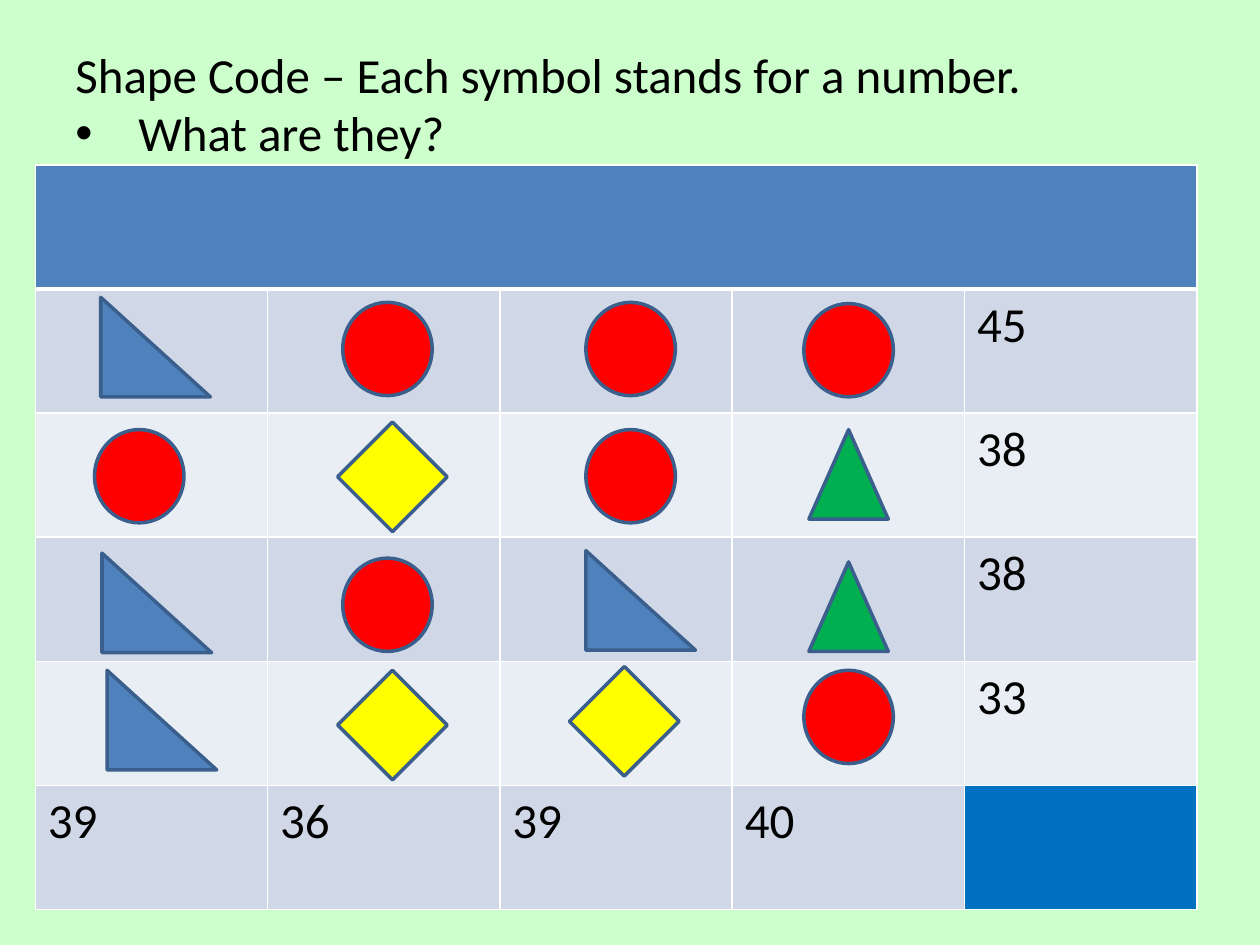
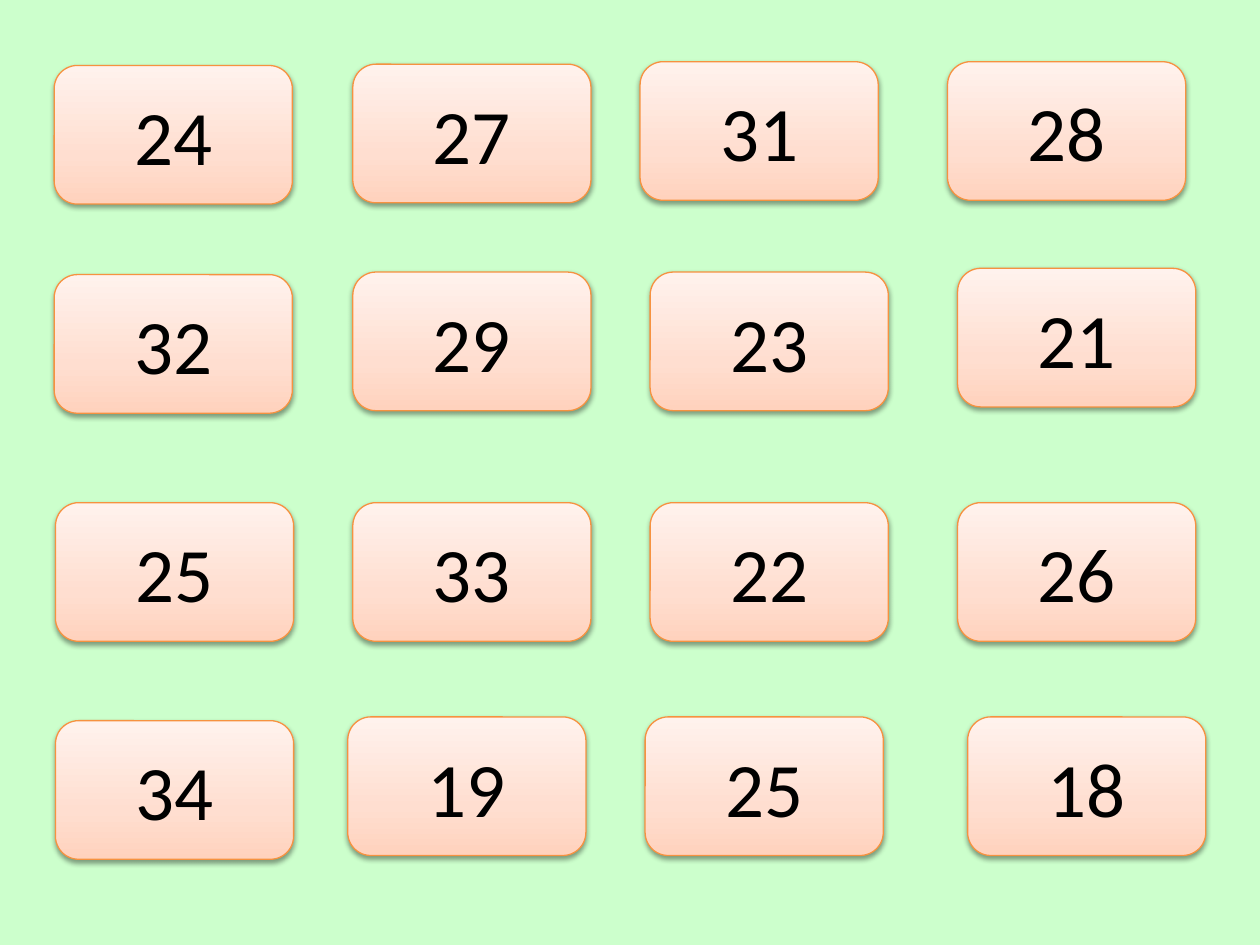
from lxml.etree import SubElement
from pptx import Presentation
from pptx.dml.color import RGBColor
from pptx.enum.shapes import MSO_SHAPE
from pptx.enum.text import MSO_ANCHOR, PP_ALIGN
from pptx.oxml import parse_xml
from pptx.oxml.ns import nsdecls, qn
from pptx.util import Inches, Pt

COLOURS = {
    "page": "CCFFCC", "ink": "000000", "white": "FFFFFF",
    "header": "4F81BD", "band_dark": "D0D8E8", "band_light": "E9EDF4",
    "corner": "0070C0", "outline": "3A5F8C",
    "blue": "4F81BD", "red": "FF0000", "yellow": "FFFF00", "green": "00B050",
    "card_line": "F69240",
    "card_low": "FFD2BD", "card_mid": "FFDED0", "card_high": "FFF2ED",
}
CARD_STOPS = [(0, "card_low"), (35, "card_mid"), (100, "card_high")]
GRID_COLUMNS, GRID_ROWS = 10, 7.5

# Symbol: preset shape, fill colour, columns wide, rows high
SYMBOLS = {
    "corner": (MSO_SHAPE.RIGHT_TRIANGLE, "blue", 0.87, 0.79),
    "circle": (MSO_SHAPE.OVAL, "red", 0.71, 0.74),
    "diamond": (MSO_SHAPE.DIAMOND, "yellow", 0.87, 0.87),
    "triangle": (MSO_SHAPE.ISOSCELES_TRIANGLE, "green", 0.63, 0.71),
}
# Puzzle rows: symbol, column, row
PUZZLE = [
    [("corner", 0.8, 2.36), ("circle", 2.72, 2.4), ("circle", 4.65, 2.4), ("circle", 6.38, 2.41)],
    [("circle", 0.75, 3.41), ("diamond", 2.68, 3.35), ("circle", 4.65, 3.41), ("triangle", 6.42, 3.41)],
    [("corner", 0.81, 4.39), ("circle", 2.72, 4.43), ("corner", 4.65, 4.37), ("triangle", 6.42, 4.46)],
    [("corner", 0.85, 5.32), ("diamond", 2.68, 5.32), ("diamond", 4.52, 5.29), ("circle", 6.38, 5.32)],
]
ROW_TOTALS = ["45", "38", "38", "33"]
COLUMN_TOTALS = ["39", "36", "39", "40"]

# Card rows: number, column, row
CARDS = [
    [("24", 0.43, 0.52), ("27", 2.8, 0.51), ("31", 5.08, 0.49), ("28", 7.52, 0.49)],
    [("32", 0.43, 2.18), ("29", 2.8, 2.16), ("23", 5.16, 2.16), ("21", 7.6, 2.13)],
    [("25", 0.44, 3.99), ("33", 2.8, 3.99), ("22", 5.16, 3.99), ("26", 7.6, 3.99)],
    [("34", 0.44, 5.72), ("19", 2.76, 5.69), ("25", 5.12, 5.69), ("18", 7.68, 5.69)],
]


def colour(name):
    return RGBColor.from_string(COLOURS[name])


class Sheet:
    """Holds the deck, its style and the current page."""

    font = "Calibri"

    def __init__(self):
        self.deck = Presentation()
        self.deck.slide_width, self.deck.slide_height = Inches(10), Inches(7.5)

    def new_page(self):
        self.page = self.deck.slides.add_slide(self.deck.slide_layouts[6])
        background = self.page.background.fill
        background.solid()
        background.fore_color.rgb = colour("page")

    def place(self, left, top, width, height):
        column = self.deck.slide_width / GRID_COLUMNS
        row = self.deck.slide_height / GRID_ROWS
        return [round(length) for length in
                (left * column, top * row, width * column, height * row)]

    def add_span(self, para, text, size):
        span = para.add_run()
        span.text = text
        span.font.name = self.font
        span.font.size = Pt(size)
        span.font.color.rgb = colour("ink")

    def heading(self, title, question):
        box = self.page.shapes.add_textbox(*self.place(0.5, 0.3, 9, 0.85))
        box.text_frame.word_wrap = True
        self.add_span(box.text_frame.paragraphs[0], title, 28)
        para = box.text_frame.add_paragraph()
        self.add_span(para, question, 28)
        properties = para._p.get_or_add_pPr()
        properties.set("marL", str(Inches(0.5)))
        properties.set("indent", str(-Inches(0.5)))
        SubElement(properties, qn("a:buFont")).set("typeface", "Arial")
        SubElement(properties, qn("a:buChar")).set("char", "•")

    def shape(self, preset, area, line, width):
        shape = self.page.shapes.add_shape(preset, *self.place(*area))
        shape.shadow.inherit = False
        shape.line.color.rgb = colour(line)
        shape.line.width = Pt(width)
        return shape

    def symbol(self, name, left, top):
        preset, fill, width, height = SYMBOLS[name]
        shape = self.shape(preset, (left, top, width, height), "outline", 2)
        shape.fill.solid()
        shape.fill.fore_color.rgb = colour(fill)

    def card(self, number, left, top):
        card = self.shape(MSO_SHAPE.ROUNDED_RECTANGLE, (left, top, 1.89, 1.1),
                          "card_line", 0.75)
        # Gradient, pale at the top
        card.fill.gradient()
        card.fill.gradient_angle = 90
        properties = card._element.spPr
        stops = properties.find(qn("a:gradFill")).find(qn("a:gsLst"))
        for stop in list(stops):
            stops.remove(stop)
        for share, name in CARD_STOPS:
            stop = SubElement(stops, qn("a:gs"), pos=str(share * 1000))
            SubElement(stop, qn("a:srgbClr"), val=COLOURS[name])
        # Soft shadow below
        properties.find(qn("a:effectLst")).append(parse_xml(
            f'<a:outerShdw {nsdecls("a")} blurRad="{Pt(3.1)}" dist="{Pt(1.6)}" '
            f'dir="5400000" rotWithShape="0"><a:srgbClr val="{COLOURS["ink"]}">'
            '<a:alpha val="38000"/></a:srgbClr></a:outerShdw>'))
        card.text_frame.vertical_anchor = MSO_ANCHOR.MIDDLE
        para = card.text_frame.paragraphs[0]
        para.alignment = PP_ALIGN.CENTER
        self.add_span(para, number, 44)

    def cell(self, cell, fill, text="", top=1, bottom=1):
        cell.fill.solid()
        cell.fill.fore_color.rgb = colour(fill)
        properties = cell._tc.get_or_add_tcPr()
        for index, (side, width) in enumerate(zip("LRTB", (1, 1, top, bottom))):
            properties.insert(index, parse_xml(
                f'<a:ln{side} {nsdecls("a")} w="{Pt(width)}"><a:solidFill>'
                f'<a:srgbClr val="{COLOURS["white"]}"/></a:solidFill></a:ln{side}>'))
        if text:
            self.add_span(cell.text_frame.paragraphs[0], text, 28)

    def totals_table(self, row_totals, column_totals):
        rows, columns = len(row_totals) + 2, len(column_totals) + 1
        table = self.page.shapes.add_table(
            rows, columns, *self.place(0.28, 1.31, 9.22, 5.91)).table
        table.first_row = table.horz_banding = False
        contents = [[""] * columns]
        contents += [[""] * len(column_totals) + [total] for total in row_totals]
        contents += [column_totals + [""]]
        for row, texts in enumerate(contents):
            band = "band_dark" if row % 2 else "band_light"
            for column, text in enumerate(texts):
                fill = "header" if row == 0 else band
                if (row, column) == (rows - 1, columns - 1):
                    fill = "corner"
                self.cell(table.cell(row, column), fill, text,
                          top=3 if row == 1 else 1, bottom=3 if row == 0 else 1)
        table.cell(0, 0).merge(table.cell(0, columns - 1))


def main():
    sheet = Sheet()

    # Shape code puzzle
    sheet.new_page()
    sheet.totals_table(ROW_TOTALS, COLUMN_TOTALS)
    sheet.heading("Shape Code – Each symbol stands for a number.", "What are they?")
    for puzzle_row in PUZZLE:
        for symbol in puzzle_row:
            sheet.symbol(*symbol)

    # Number cards
    sheet.new_page()
    for card_row in CARDS:
        for card in card_row:
            sheet.card(*card)

    sheet.deck.save("out.pptx")


if __name__ == "__main__":
    main()
